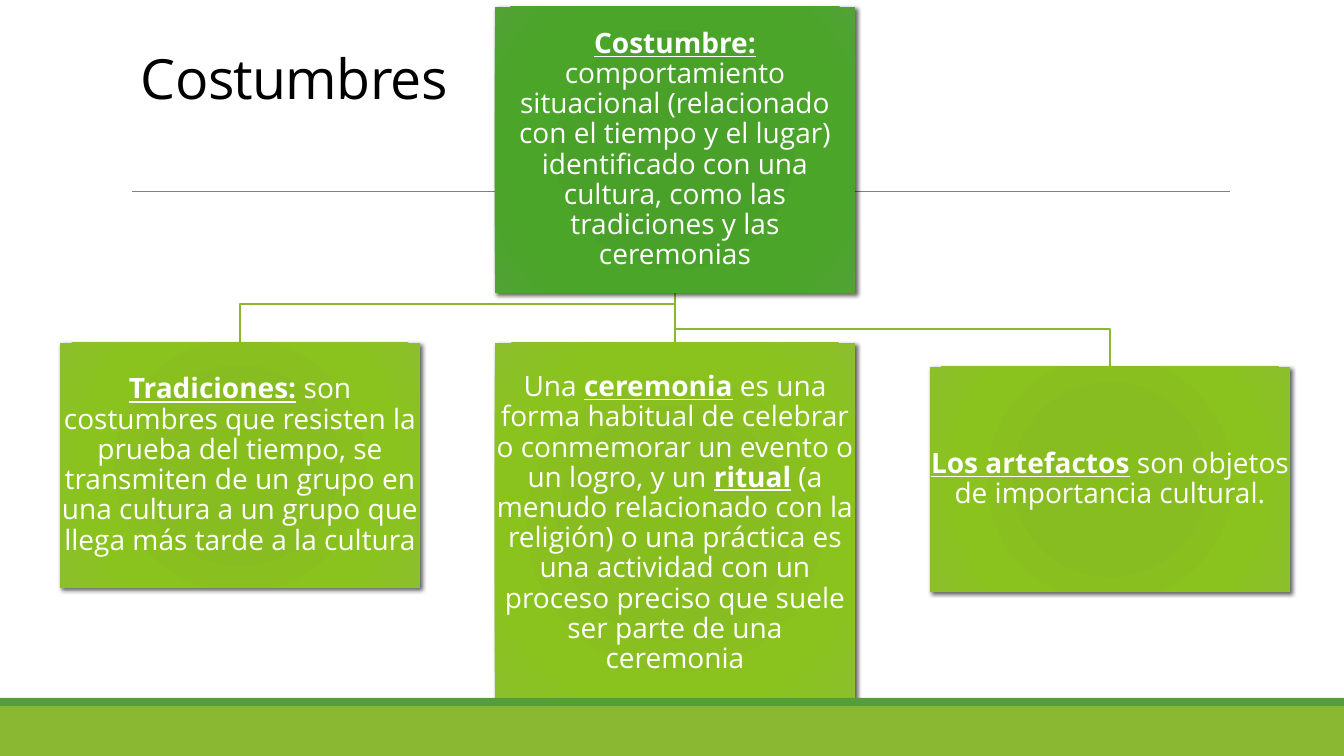
import pptx
import pptx.util
import pptx.oxml
import pptx.oxml.ns
import pptx.dml.color
import pptx.enum.shapes
import pptx.enum.text

PX = 914400 / 100.8
WIDTH, HEIGHT = 1344, 756
FONT = "Open Sans"
TITLE = "Costumbres"
DARK = ["48A127", "4AA12A", "4AA528", "52A334"]
LIGHT = ["86BE1D", "87BD20", "8AC31E", "8CBF2C"]
STOPS = [0, 34, 70, 100]
BOX_WIDTH, FIRST_LEFT, PITCH = 360, 60, 435

ROOT = {"column": 1, "top": 7, "height": 286, "colors": DARK, "runs": [
    ("Costumbre:", True),
    (" comportamiento situacional (relacionado con el tiempo y el lugar) identificado "
     "con una cultura, como las tradiciones y las ceremonias", False)]}
CHILDREN = [
    {"column": 0, "top": 343, "height": 245, "colors": LIGHT, "bend": 304, "runs": [
        ("Tradiciones:", True),
        (" son costumbres que resisten la prueba del tiempo, se transmiten de un grupo "
         "en una cultura a un grupo que llega más tarde a la cultura", False)]},
    {"column": 1, "top": 343, "height": 361, "colors": LIGHT, "bend": None, "runs": [
        ("Una ", False),
        ("ceremonia", True),
        (" es una forma habitual de celebrar o conmemorar un evento o un logro, y un ", False),
        ("ritual", True),
        (" (a menudo relacionado con la religión) o una práctica es una actividad con un "
         "proceso preciso que suele ser parte de una ceremonia", False)]},
    {"column": 2, "top": 367, "height": 225, "colors": LIGHT, "bend": 329, "runs": [
        ("Los artefactos", True),
        (" son objetos de importancia cultural.", False)]},
]
BANDS = [(706, 50, "8AB833"), (698, 8, "549E39")]


def px(value):
    return pptx.util.Emu(round(value * PX))


def color(value):
    return pptx.dml.color.RGBColor.from_string(value)


def set_all(target, values):
    for name, value in values.items():
        setattr(target, name, value)


def xml(tag, attributes, content=""):
    return pptx.oxml.parse_xml(
        f'<a:{tag} {pptx.oxml.ns.nsdecls("a")} {attributes}>{content}</a:{tag}>')


def add_line(slide, start, end, line_color, width):
    line = slide.shapes.add_connector(
        pptx.enum.shapes.MSO_CONNECTOR.STRAIGHT, *map(px, start + end))
    line.line.color.rgb = color(line_color)
    line.line.width = pptx.util.Pt(width)
    line._element.spPr.append(xml("effectLst", ""))


def add_rectangle(slide, left, top, width, height):
    shape = slide.shapes.add_shape(
        pptx.enum.shapes.MSO_SHAPE.RECTANGLE, *map(px, (left, top, width, height)))
    shape.line.fill.background()
    shape.shadow.inherit = False
    return shape


def add_run(paragraph, text, size, text_color, emphasis=False):
    run = paragraph.add_run()
    run.text = text
    set_all(run.font, {"name": FONT, "size": pptx.util.Pt(size),
                       "bold": emphasis, "underline": emphasis})
    run.font.color.rgb = color(text_color)
    return run


def box_center(box):
    return FIRST_LEFT + PITCH * box["column"] + BOX_WIDTH / 2


def add_box(slide, box):
    shape = add_rectangle(slide, box_center(box) - BOX_WIDTH / 2, box["top"],
                          BOX_WIDTH, box["height"])
    stops = "".join(f'<a:gs pos="{stop * 1000}"><a:srgbClr val="{value}"/></a:gs>'
                    for stop, value in zip(STOPS, box["colors"]))
    corner = 'l="100000" t="100000" r="100000" b="100000"'
    properties = shape._element.spPr
    properties.find(pptx.oxml.ns.qn("a:ln")).addprevious(xml(
        "gradFill", 'rotWithShape="1"',
        f'<a:gsLst>{stops}</a:gsLst><a:path path="circle"><a:fillToRect {corner}/></a:path>'))
    properties.find(pptx.oxml.ns.qn("a:effectLst")).append(xml(
        "outerShdw", 'blurRad="38100" dist="25400" dir="2700000" rotWithShape="0"',
        '<a:srgbClr val="000000"><a:alpha val="60000"/></a:srgbClr>'))
    margin = px(1)
    set_all(shape.text_frame, {
        "word_wrap": True, "vertical_anchor": pptx.enum.text.MSO_ANCHOR.MIDDLE,
        "margin_left": margin, "margin_right": margin,
        "margin_top": margin, "margin_bottom": margin})
    paragraph = shape.text_frame.paragraphs[0]
    set_all(paragraph, {"alignment": pptx.enum.text.PP_ALIGN.CENTER, "line_spacing": 0.9})
    for text, emphasis in box["runs"]:
        add_run(paragraph, text, 20, "FFFFFF", emphasis)


def add_branch(slide, child):
    start = (box_center(ROOT), ROOT["top"] + ROOT["height"])
    end = (box_center(child), child["top"])
    if child["bend"] is None:
        add_line(slide, start, end, "8AB833", 1)
        return
    builder = slide.shapes.build_freeform(*start, scale=PX)
    builder.add_line_segments(
        [(start[0], child["bend"]), (end[0], child["bend"]), end], close=False)
    branch = builder.convert_to_shape()
    branch.fill.background()
    branch.line.color.rgb = color("8AB833")
    branch.line.width = pptx.util.Pt(1)
    branch.shadow.inherit = False


def add_title(slide):
    title = slide.shapes.title
    set_all(title, {"left": px(121), "top": px(31), "width": px(1109), "height": px(160)})
    set_all(title.text_frame, {
        "word_wrap": True, "auto_size": pptx.enum.text.MSO_AUTO_SIZE.NONE,
        "vertical_anchor": pptx.enum.text.MSO_ANCHOR.BOTTOM,
        "margin_left": px(20), "margin_right": px(20),
        "margin_top": 0, "margin_bottom": px(80)})
    paragraph = title.text_frame.paragraphs[0]
    set_all(paragraph, {"alignment": pptx.enum.text.PP_ALIGN.LEFT, "line_spacing": 0.85})
    run = add_run(paragraph, TITLE, 39.6, "000000")
    run.font._element.set("spc", "-50")


def main():
    presentation = pptx.Presentation()
    set_all(presentation, {"slide_width": px(WIDTH), "slide_height": px(HEIGHT)})
    slide = presentation.slides.add_slide(presentation.slide_layouts[5])
    add_title(slide)
    add_line(slide, (132, 191), (1230, 191), "808080", 0.5)
    for child in CHILDREN:
        add_branch(slide, child)
    for box in [ROOT] + CHILDREN:
        add_box(slide, box)
    for top, height, fill in BANDS:
        band = add_rectangle(slide, 0, top, WIDTH, height)
        band.fill.solid()
        band.fill.fore_color.rgb = color(fill)
    presentation.save("out.pptx")


if __name__ == "__main__":
    main()
